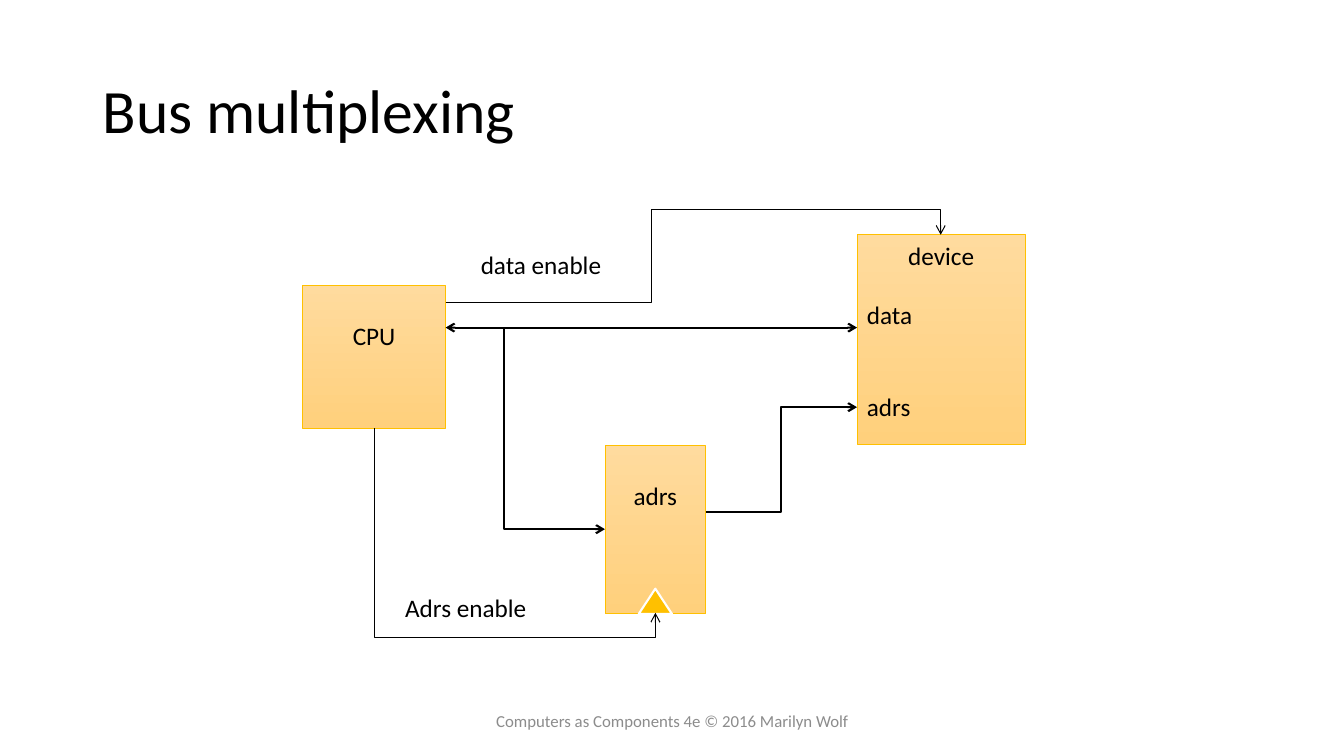
from dataclasses import dataclass

from lxml import etree
from pptx import Presentation
from pptx.dml.color import RGBColor
from pptx.enum.shapes import MSO_CONNECTOR, MSO_SHAPE
from pptx.enum.text import MSO_ANCHOR, PP_ALIGN
from pptx.oxml.ns import qn
from pptx.util import Inches, Pt

RECTANGLE, TRIANGLE = MSO_SHAPE.RECTANGLE, MSO_SHAPE.ISOSCELES_TRIANGLE
STRAIGHT, ELBOW = MSO_CONNECTOR.STRAIGHT, MSO_CONNECTOR.ELBOW
TOP, MIDDLE = MSO_ANCHOR.TOP, MSO_ANCHOR.MIDDLE
LEFT, CENTER = PP_ALIGN.LEFT, PP_ALIGN.CENTER


@dataclass(frozen=True)
class Theme:
    font: str = "Calibri"
    title_size: float = 44
    label_size: float = 18
    footer_size: float = 12
    ink: str = "000000"
    muted: str = "8C8C8C"
    accent: str = "FFC000"
    white: str = "FFFFFF"
    block_fill: tuple = ("FFDB9E", "FFD07C")
    block_line: float = 0.5
    bus_line: float = 1.5
    control_line: float = 0.75


THEME = Theme()


def color(value):
    return RGBColor.from_string(value)


def write(shape, text, size=THEME.label_size, ink=THEME.ink, align=LEFT,
          line_spacing=None, **frame_format):
    frame = shape.text_frame
    for name, value in frame_format.items():
        setattr(frame, name, value)
    paragraph = frame.paragraphs[0]
    paragraph.text = text
    paragraph.alignment = align
    paragraph.line_spacing = line_spacing
    font = paragraph.runs[0].font
    for name, value in {"name": THEME.font, "size": Pt(size)}.items():
        setattr(font, name, value)
    font.color.rgb = color(ink)


def add_text(slide, box, text, **text_format):
    shape = slide.shapes.add_textbox(*map(Inches, box))
    write(shape, text, **{"word_wrap": True, **text_format})


def add_label(slide, box, text):
    add_text(slide, box, text, word_wrap=False)


def add_block(slide, box, text, margin_top):
    block = slide.shapes.add_shape(RECTANGLE, *map(Inches, box))
    block.shadow.inherit = False
    block.fill.gradient()
    block.fill.gradient_angle = 270
    for stop, value in zip(block.fill.gradient_stops, THEME.block_fill):
        stop.color.rgb = color(value)
    block.line.color.rgb = color(THEME.accent)
    block.line.width = Pt(THEME.block_line)
    write(block, text, align=CENTER, vertical_anchor=TOP,
          margin_top=Inches(margin_top))


def add_wire(slide, start, end, width, kind=ELBOW, preset=None, bends=(),
             turned=False, ends=("tailEnd",)):
    (x1, y1), (x2, y2) = start, end
    if turned:
        center_x, center_y = (x1 + x2) / 2, (y1 + y2) / 2
        half_width, half_height = abs(y2 - y1) / 2, abs(x2 - x1) / 2
        x1, x2 = center_x - half_width, center_x + half_width
        y1, y2 = center_y - half_height, center_y + half_height
    wire = slide.shapes.add_connector(kind, *map(Inches, (x1, y1, x2, y2)))
    wire.line.color.rgb = color(THEME.ink)
    wire.line.width = Pt(width)
    properties = wire._element.spPr
    if turned:
        frame = properties.find(qn("a:xfrm"))
        frame.set("rot", "16200000")
        frame.set("flipH", "1")
    geometry = properties.find(qn("a:prstGeom"))
    if preset:
        geometry.set("prst", preset)
    for number, bend in enumerate(bends, 1):
        etree.SubElement(geometry.find(qn("a:avLst")), qn("a:gd"),
                         name=f"adj{number}", fmla=f"val {round(bend * 100000)}")
    line = properties.find(qn("a:ln"))
    for arrowhead in ends:
        etree.SubElement(line, qn(f"a:{arrowhead}"), type="arrow")
    etree.SubElement(properties, qn("a:effectLst"))


def add_cpu(slide, left, top):
    add_block(slide, (left, top, 1.42, 1.42), "CPU", margin_top=0.35)


def add_address_latch(slide, left, top):
    width, height = 1, 1.67
    clock_width, clock_height = 0.33, 0.25
    add_block(slide, (left, top, width, height), "adrs", margin_top=0.35)
    clock = slide.shapes.add_shape(
        TRIANGLE, Inches(left + (width - clock_width) / 2),
        Inches(top + height - clock_height),
        Inches(clock_width), Inches(clock_height))
    clock.shadow.inherit = False
    clock.fill.solid()
    clock.fill.fore_color.rgb = color(THEME.accent)
    clock.line.color.rgb = color(THEME.white)
    clock.line.width = Pt(THEME.bus_line)


def add_device(slide, left, top):
    add_block(slide, (left, top, 1.67, 2.08), "device", margin_top=0.05)
    add_label(slide, (left, top + 0.59, 0.66, 0.4), "data")
    add_label(slide, (left, top + 1.5, 0.64, 0.4), "adrs")


def add_buses(slide, left, top):
    device_left = left + 4.08
    add_wire(slide, (left, top), (device_left, top), THEME.bus_line,
             kind=STRAIGHT, ends=("headEnd", "tailEnd"))
    add_wire(slide, (left + 0.58, top), (left + 1.58, top + 2), THEME.bus_line,
             preset="bentConnector2", turned=True)
    add_wire(slide, (left + 2.58, top + 1.83), (device_left, top + 0.79),
             THEME.bus_line, bends=(0.5,))


def add_controls(slide, left, top):
    add_wire(slide, (left + 0.71, top + 0.67), (left + 5.62, top),
             THEME.control_line, preset="bentConnector4", bends=(0.415, 1.375))
    add_wire(slide, (left, top + 1.92), (left + 2.79, top + 3.75),
             THEME.control_line, bends=(1.136,), turned=True)
    add_label(slide, (left + 0.96, top + 0.09, 1.41, 0.4), "data enable")
    add_label(slide, (left + 0.21, top + 3.5, 1.42, 0.4), "Adrs enable")


def add_diagram(slide, left, top):
    add_cpu(slide, left, top + 0.5)
    add_address_latch(slide, left + 3, top + 2.09)
    add_device(slide, left + 5.5, top)
    add_buses(slide, left + 1.42, top + 0.92)
    add_controls(slide, left + 0.71, top)


def main():
    presentation = Presentation()
    presentation.slide_width = Inches(13.33)
    presentation.slide_height = Inches(7.5)
    slide = presentation.slides.add_slide(presentation.slide_layouts[6])
    add_text(slide, (0.92, 0.4, 11.5, 1.45), "Bus multiplexing",
             size=THEME.title_size, line_spacing=0.9, vertical_anchor=MIDDLE)
    add_diagram(slide, 3, 2.33)
    add_text(slide, (4.42, 6.95, 4.5, 0.4),
             "Computers as Components 4e © 2016 Marilyn Wolf",
             size=THEME.footer_size, ink=THEME.muted, align=CENTER,
             vertical_anchor=MIDDLE)
    presentation.save("out.pptx")


if __name__ == "__main__":
    main()
